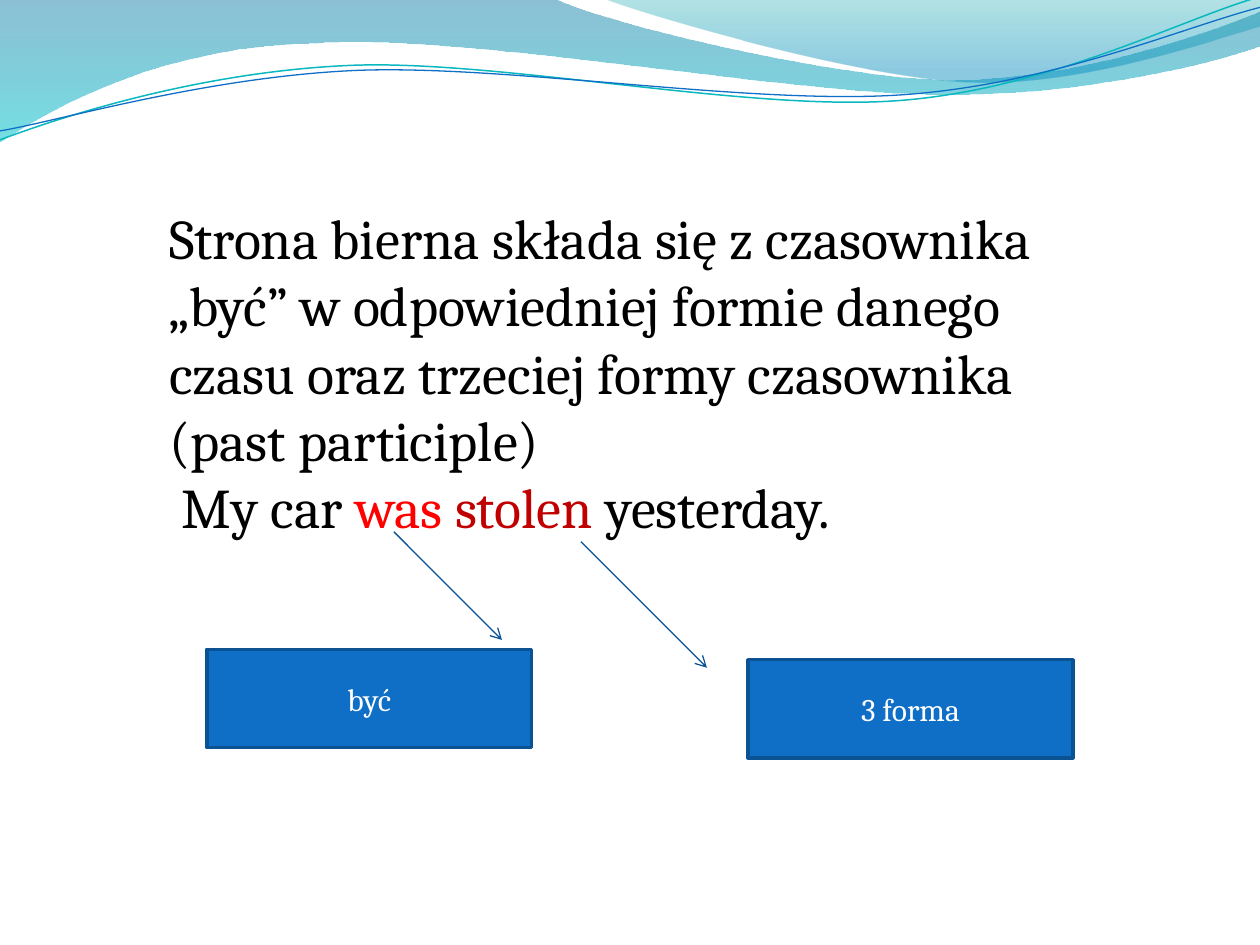
import pptx
import pptx.dml.color
import pptx.enum.shapes
import pptx.enum.text
import pptx.oxml
import pptx.oxml.ns
import pptx.util

Cm = pptx.util.Cm
Pt = pptx.util.Pt
qn = pptx.oxml.ns.qn
FONT = "Cambria"

BAND = [
    [(0, 0)], [(11.18, -0.03)],
    [(12.09, 0.43), (16.87, 1.6), (19.25, 1.6)],
    [(21.67, 1.6), (24.33, 0.66), (25.4, 0.23)],
    [(25.43, 0.91)],
    [(24.97, 1.12), (22.1, 1.93), (18.95, 1.9)],
    [(15.8, 1.9), (9.7, 0.71), (6.53, 0.86)],
    [(3.25, 0.91), (1.17, 2.11), (-0.03, 2.87)],
    [(0, 0)],
]
CREST = [
    [(12.17, -0.03)],
    [(12.93, 0.28), (17.32, 1.57), (19.53, 1.65)],
    [(21.74, 1.75), (24.41, 0.81), (25.4, 0.53)],
    [(25.4, 0)], [(12.17, -0.03)],
]
TEAL_RIPPLE = [
    [(0, 2.82)],
    [(1.22, 2.36), (4.01, 1.45), (7.04, 1.32)],
    [(10.03, 1.19), (15.06, 2.26), (18.11, 2.03)],
    [(21.16, 1.8), (23.83, 0.38), (25.35, -0.05)],
]
BLUE_RIPPLE = [
    [(0, 2.64)],
    [(1.19, 2.44), (4.17, 1.55), (7.19, 1.42)],
    [(10.24, 1.3), (15.16, 2.13), (18.21, 1.91)],
    [(21.23, 1.7), (23.9, 0.53), (25.4, 0.15)],
]


def colour(hex_code):
    return pptx.dml.color.RGBColor.from_string(hex_code)


def add_xml(parent, tag, **attributes):
    child = pptx.oxml.parse_xml(f"<a:{tag} {pptx.oxml.ns.nsdecls('a')}/>")
    for name, value in attributes.items():
        child.set(name, value)
    parent.append(child)
    return child


def set_line(line, hex_code, weight):
    line.color.rgb = colour(hex_code)
    line.width = Pt(weight)


def bend_segments(outline, segments):
    steps = iter(list(outline.element.spPr.iter(qn("a:lnTo"))))
    for segment in segments[1:]:
        first, *others = [next(steps) for corner in segment]
        if others:
            curve = add_xml(first.getparent(), "cubicBezTo")
            first.addprevious(curve)
            for step in (first, *others):
                curve.append(step[0])
                step.getparent().remove(step)


def add_outline(slide, left, top, segments, closed):
    points = [(Cm(left + x), Cm(top + y)) for segment in segments for x, y in segment]
    builder = slide.shapes.build_freeform(*points[0])
    builder.add_line_segments(points[1:], close=closed)
    outline = builder.convert_to_shape()
    bend_segments(outline, segments)
    outline.shadow.inherit = False
    return outline


def add_wave_header(slide, left, top):
    washes = (
        (BAND, ((0, "0074A1", 45), (1, "00C6CF", 55))),
        (CREST, ((0, "00A1A9", 30), (0.8, "008BBF", 45))),
    )
    for segments, stops in washes:
        wash = add_outline(slide, left, top, segments, True)
        wash.line.fill.background()
        wash.fill.gradient()
        wash.fill.gradient_angle = 270
        for stop, (position, hex_code, opacity) in zip(wash.fill.gradient_stops, stops):
            stop.position = position
            stop.color.rgb = colour(hex_code)
        tints = list(wash.element.spPr.iter(qn("a:srgbClr")))
        for tint, (position, hex_code, opacity) in zip(tints, stops):
            add_xml(tint, "alpha", val=str(opacity * 1000))

    for segments, hex_code, weight in ((TEAL_RIPPLE, "0AB8BF", 0.85),
                                       (BLUE_RIPPLE, "0F6FC6", 0.75)):
        ripple = add_outline(slide, left, top, segments, False)
        ripple.fill.background()
        set_line(ripple.line, hex_code, weight)


def add_rule(slide, left, top, width, height):
    rule = slide.shapes.add_textbox(Cm(left), Cm(top), Cm(width), Cm(height)).text_frame
    rule.word_wrap = True
    rule.auto_size = pptx.enum.text.MSO_AUTO_SIZE.SHAPE_TO_FIT_TEXT
    definition = rule.paragraphs[0]
    definition.text = (
        "Strona bierna składa się z czasownika „być” w odpowiedniej formie "
        "danego czasu oraz trzeciej formy czasownika (past participle)"
    )
    definition.font.color.rgb = colour("000000")
    example = rule.add_paragraph()
    for words, hex_code in ((" My car ", "000000"), ("was ", "FF0000"),
                            ("stolen ", "C00000"), ("yesterday.", "000000")):
        run = example.add_run()
        run.text = words
        run.font.color.rgb = colour(hex_code)
    for paragraph in rule.paragraphs:
        paragraph.font.name = FONT
        paragraph.font.size = Pt(32)


def add_arrow(slide, left, top, reach):
    arrow = slide.shapes.add_connector(
        pptx.enum.shapes.MSO_CONNECTOR.STRAIGHT,
        Cm(left), Cm(top), Cm(left + reach), Cm(top + reach))
    set_line(arrow.line, "095295", 0.75)
    add_xml(arrow.element.spPr.find(qn("a:ln")), "tailEnd", type="arrow")
    add_xml(arrow.element.spPr, "effectLst")


def add_label(slide, left, top, width, height, words):
    label = slide.shapes.add_shape(
        pptx.enum.shapes.MSO_SHAPE.RECTANGLE, Cm(left), Cm(top), Cm(width), Cm(height))
    label.shadow.inherit = False
    label.fill.solid()
    label.fill.fore_color.rgb = colour("0F6FC6")
    set_line(label.line, "0B5292", 2)
    label.text_frame.vertical_anchor = pptx.enum.text.MSO_ANCHOR.MIDDLE
    caption = label.text_frame.paragraphs[0]
    caption.text = words
    caption.alignment = pptx.enum.text.PP_ALIGN.CENTER
    caption.font.name = FONT
    caption.font.size = Pt(18)
    caption.font.color.rgb = colour("FFFFFF")


def add_verb_parts(slide, left, top, width):
    label_width, label_height = 6.55, 1.98
    add_arrow(slide, left + 3.77, top, 2.18)
    add_arrow(slide, left + 7.54, top + 0.2, 2.54)
    add_label(slide, left, top + 2.37, label_width, label_height, "być")
    add_label(slide, left + width - label_width, top + 2.58,
              label_width, label_height, "3 forma")


def main():
    deck = pptx.Presentation()
    deck.slide_width, deck.slide_height = Cm(25.4), Cm(19.05)
    slide = deck.slides.add_slide(deck.slide_layouts[6])
    slide.background.fill.solid()
    slide.background.fill.fore_color.rgb = colour("FFFFFF")
    add_wave_header(slide, 0, 0)
    add_rule(slide, 3.16, 3.98, 19.25, 10.52)
    add_verb_parts(slide, 4.17, 10.72, 17.46)
    deck.save("out.pptx")


if __name__ == "__main__":
    main()
